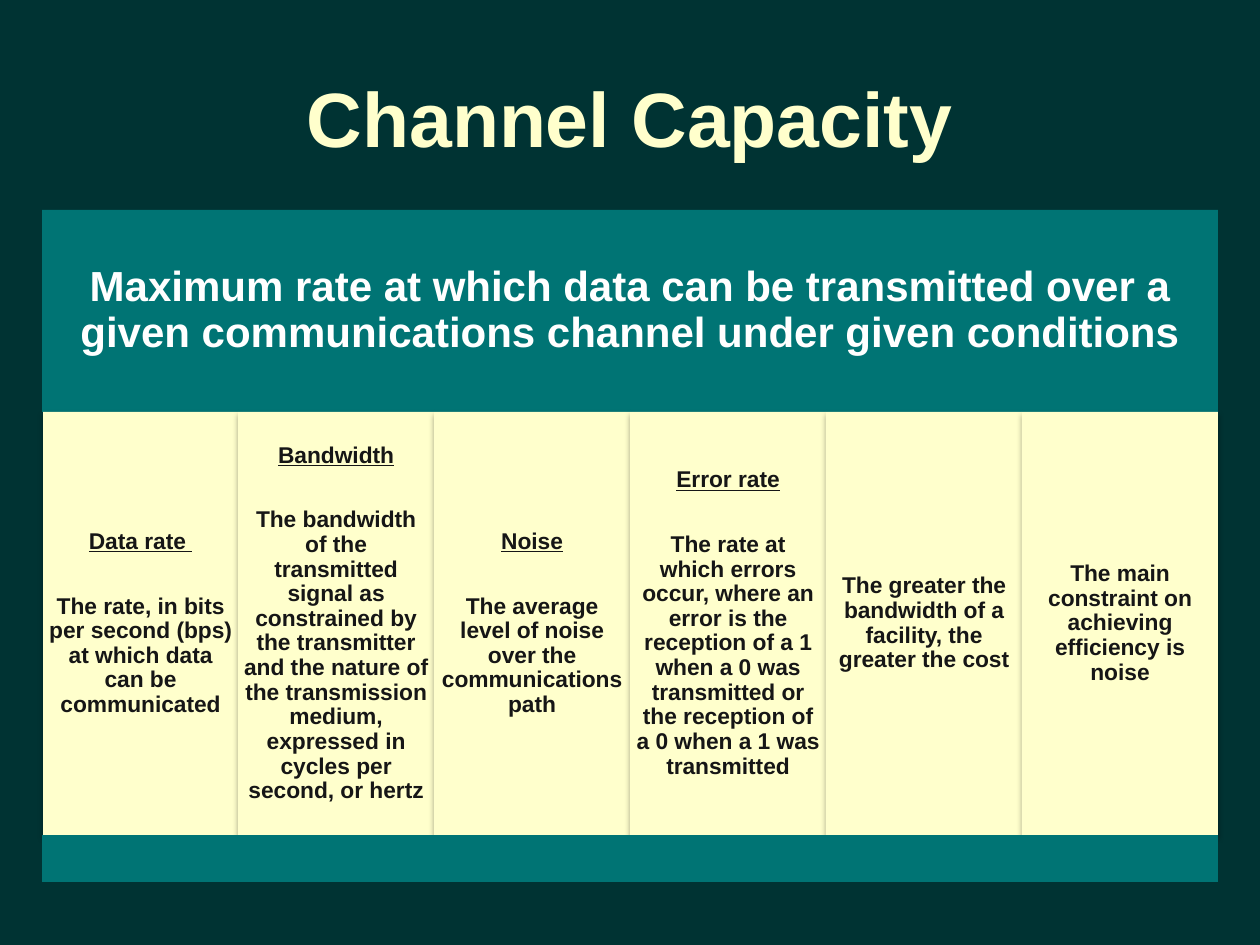
from lxml.etree import SubElement
from pptx import Presentation
from pptx.dml.color import RGBColor
from pptx.enum.shapes import MSO_SHAPE
from pptx.enum.text import MSO_ANCHOR, PP_ALIGN
from pptx.oxml.ns import qn
from pptx.util import Pt

PX = 914400 / 126
COLOURS = {"background": "003333", "teal": "007474", "cream": "FFFFCC",
           "white": "FFFFFF", "ink": "161616", "shadow": "000000"}


def add_block(left, top, width, height, fill=None, inset=13):
    lengths = [round(value * PX) for value in (left, top, width, height)]
    box = page.shapes.add_shape(MSO_SHAPE.RECTANGLE, *lengths)
    box.shadow.inherit = False
    box.line.fill.background()
    if fill:
        box.fill.solid()
        box.fill.fore_color.rgb = RGBColor.from_string(COLOURS[fill])
    else:
        box.fill.background()
    frame = box.text_frame
    frame.word_wrap = True
    frame.vertical_anchor = MSO_ANCHOR.MIDDLE
    for side in ("left", "top", "right", "bottom"):
        setattr(frame, f"margin_{side}", round(inset * PX))
    return box


def write_paragraphs(box, texts, size, colour, spacing=0.9, gap=0):
    """Write the texts; when there are two, the first is an underlined heading."""
    frame = box.text_frame
    for index, text in enumerate(texts):
        para = frame.paragraphs[0] if index == 0 else frame.add_paragraph()
        heading = index < len(texts) - 1
        para.alignment = PP_ALIGN.CENTER
        para.line_spacing = spacing
        para.space_after = Pt(gap if heading else 0)
        span = para.add_run()
        span.text = text
        formats = {"name": "Arial", "size": Pt(size), "bold": True, "underline": heading}
        for name, value in formats.items():
            setattr(span.font, name, value)
        span.font.color.rgb = RGBColor.from_string(COLOURS[colour])


deck = Presentation()
deck.slide_width, deck.slide_height = round(1260 * PX), round(945 * PX)
page = deck.slides.add_slide(deck.slide_layouts[6])
page.background.fill.solid()
page.background.fill.fore_color.rgb = RGBColor.from_string(COLOURS["background"])

# Title
title = add_block(63, 38, 1134, 157)
write_paragraphs(title, ["Channel Capacity"], 44, "cream", spacing=1)

# Definition panel
definition = add_block(42, 210, 1176, 202, "teal")
write_paragraphs(definition, ["Maximum rate at which data can be transmitted over a given "
                              "communications channel under given conditions"], 24, "white")

# Six equal columns with a soft shadow
columns = [
    ["Data rate ", "The rate, in bits per second (bps) at which data can be communicated"],
    ["Bandwidth", "The bandwidth of the transmitted signal as constrained by the transmitter "
                  "and the nature of the transmission medium, expressed in cycles per second, "
                  "or hertz"],
    ["Noise", "The average level of noise over the communications path"],
    ["Error rate", "The rate at which errors occur, where an error is the reception of a 1 "
                   "when a 0 was transmitted or the reception of a 0 when a 1 was transmitted"],
    ["The greater the bandwidth of a facility, the greater the cost"],
    ["The main constraint on achieving efficiency is noise"],
]
columns_left, columns_width = 43, 1175
edges = [columns_left + columns_width * index // len(columns)
         for index in range(len(columns) + 1)]
for left, right, texts in zip(edges, edges[1:], columns):
    column = add_block(left, 412, right - left, 423, "cream", inset=6)
    write_paragraphs(column, texts, 13, "ink", gap=23)
    effects = column._element.spPr.find(qn("a:effectLst"))
    shadow = SubElement(effects, qn("a:outerShdw"), blurRad=str(Pt(3.1)), dist=str(Pt(1.8)),
                        dir="5400000", rotWithShape="0")
    tint = SubElement(shadow, qn("a:srgbClr"), val=COLOURS["shadow"])
    SubElement(tint, qn("a:alpha"), val="35000")

# Bottom band
add_block(42, 835, 1176, 47, "teal")

deck.save("out.pptx")
